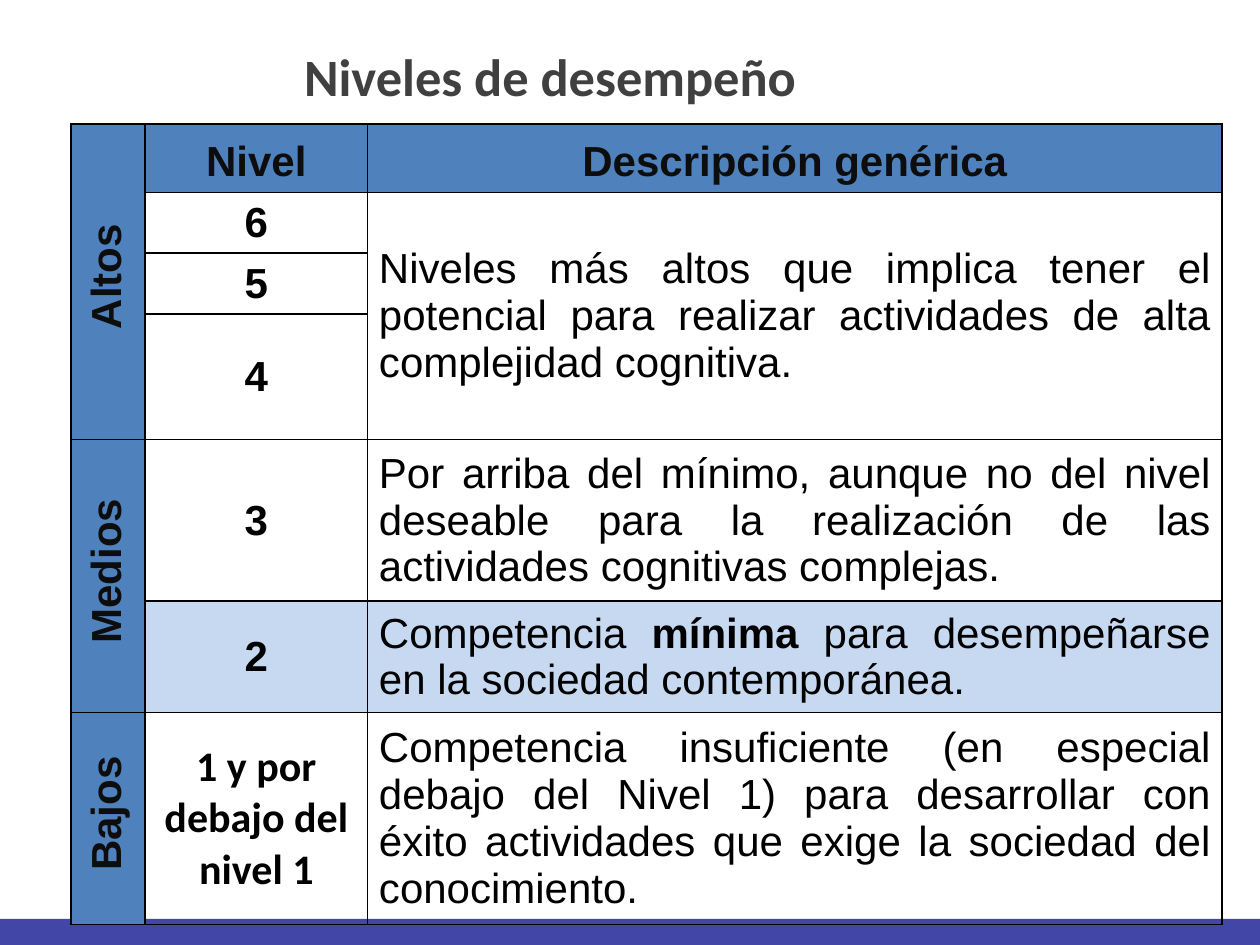
from pptx import Presentation, util as u
from pptx.dml.color import RGBColor
from pptx.enum import shapes, text
from pptx.oxml import parse_xml
from pptx.oxml.ns import nsdecls

BLUE, PALE, INK, BLACK = "4F81BD", "C6D9F1", "0D0D0D", "000000"
COLS = [42.4, 127.2, 488.2]
ROWS = [31.7, 29.5, 29.5, 31, 72, 49.7, 54]
BANDS = [("Altos", 0, 3), ("Medios", 4, 5), ("Bajos", 6, 6)]
LEVELS = ["6", "5", "4", "3", "2", "1 y por debajo del nivel 1"]
NOTES = {
    1: [("Niveles más altos que implica tener el potencial para realizar "
         "actividades de alta complejidad cognitiva.", False)],
    4: [("Por arriba del mínimo, aunque no del nivel deseable para la "
         "realización de las actividades cognitivas complejas.", False)],
    5: [("Competencia ", False), ("mínima", True),
        (" para desempeñarse en la sociedad contemporánea.", False)],
    6: [("Competencia insuficiente (en especial debajo del Nivel 1) para "
         "desarrollar con éxito actividades que exige la sociedad del "
         "conocimiento.", False)],
}


def color(code):
    return RGBColor.from_string(code)


def paint(item, code):
    item.fill.solid()
    item.fill.fore_color.rgb = color(code)


def write(frame, runs, ink=BLACK, font="Arial", size=24, align="CENTER",
          after=0, lead=1.0):
    para = frame.paragraphs[0]
    para.alignment = getattr(text.PP_ALIGN, align)
    para.space_before = u.Pt(0)
    para.space_after = u.Pt(after)
    para.line_spacing = lead
    for words, bold in runs:
        run = para.add_run()
        run.text = words
        run.font.name = font
        run.font.size = u.Pt(size)
        run.font.bold = bold
        run.font.color.rgb = color(ink)
    return para


def add_bar(slide):
    bar = slide.shapes.add_shape(shapes.MSO_SHAPE.RECTANGLE,
                                 u.Pt(0), u.Pt(525), u.Pt(720), u.Pt(15))
    bar.shadow.inherit = False
    paint(bar, "4146A7")
    bar.line.fill.background()


def add_title(slide):
    box = slide.shapes.add_textbox(u.Pt(48), u.Pt(20), u.Pt(533), u.Pt(46.8))
    frame = box.text_frame
    frame.word_wrap = True
    frame.vertical_anchor = text.MSO_ANCHOR.MIDDLE
    write(frame, [("Niveles de desempeño", True)], "404040", "Calibri", 30)


def style(cell):
    cell.vertical_anchor = text.MSO_ANCHOR.MIDDLE
    cell.margin_left = cell.margin_right = u.Pt(6.5)
    cell.margin_top = cell.margin_bottom = u.Pt(3)
    cell.fill.background()
    props = cell._tc.get_or_add_tcPr()
    for place, side in enumerate("LRTB"):
        props.insert(place, parse_xml(
            f'<a:ln{side} {nsdecls("a")} w="12700"><a:solidFill>'
            f'<a:srgbClr val="{BLACK}"/></a:solidFill></a:ln{side}>'))


def add_head(cell, words):
    paint(cell, BLUE)
    return write(cell.text_frame, [(words, True)], INK, after=10, lead=1.15)


def add_band(table, words, first, last):
    cell = table.cell(first, 0)
    if last > first:
        cell.merge(table.cell(last, 0))
    para = add_head(cell, words)
    para._p.get_or_add_pPr().set("marL", str(u.Pt(5.7)))
    cell._tc.get_or_add_tcPr().set("vert", "vert270")


def add_grid(slide):
    frame = slide.shapes.add_table(len(ROWS), len(COLS), u.Pt(40.5), u.Pt(70.8),
                                   u.Pt(sum(COLS)), u.Pt(sum(ROWS)))
    table = frame.table
    table.first_row = table.horz_banding = False
    for col, width in zip(table.columns, COLS):
        col.width = u.Pt(width)
    for row, height in zip(table.rows, ROWS):
        row.height = u.Pt(height)
    frame.height = u.Pt(423.4)
    for cell in table.iter_cells():
        style(cell)
    for band in BANDS:
        add_band(table, *band)
    add_head(table.cell(0, 1), "Nivel")
    add_head(table.cell(0, 2), "Descripción genérica")
    for row, level in enumerate(LEVELS, 1):
        font = "Arial" if level.isdigit() else "Calibri"
        write(table.cell(row, 1).text_frame, [(level, True)], font=font)
    table.cell(1, 2).merge(table.cell(3, 2))
    for row, runs in NOTES.items():
        write(table.cell(row, 2).text_frame, runs, align="JUSTIFY", after=6)
    for col in (1, 2):
        paint(table.cell(5, col), PALE)


def main():
    deck = Presentation()
    deck.slide_width, deck.slide_height = u.Pt(720), u.Pt(540)
    slide = deck.slides.add_slide(deck.slide_layouts[6])
    add_bar(slide)
    add_title(slide)
    add_grid(slide)
    deck.save("out.pptx")


if __name__ == "__main__":
    main()
